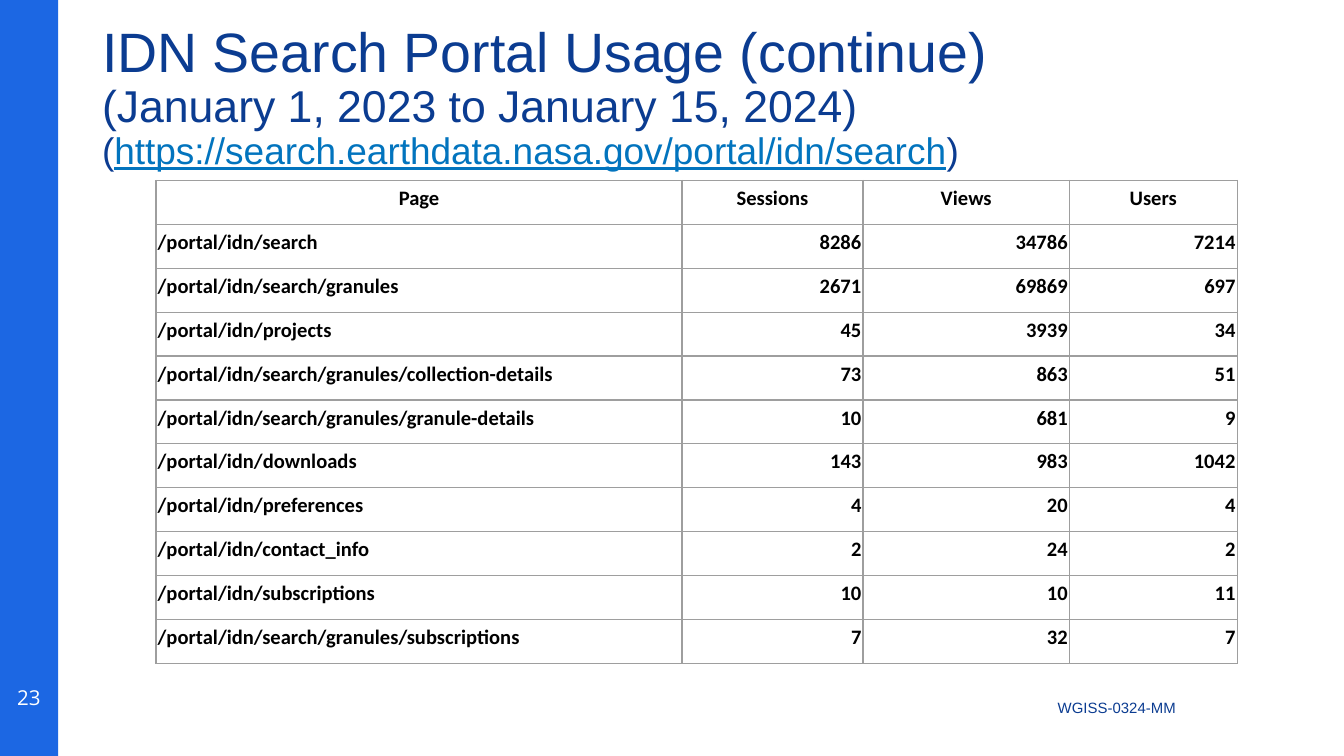
from lxml import etree
from pptx import Presentation
from pptx import util as u
from pptx.dml.color import RGBColor
from pptx.enum import shapes, text
from pptx.oxml import ns

LEFT, CENTER, RIGHT = text.PP_ALIGN.LEFT, text.PP_ALIGN.CENTER, text.PP_ALIGN.RIGHT
TOP, MIDDLE, BOTTOM = text.MSO_ANCHOR.TOP, text.MSO_ANCHOR.MIDDLE, text.MSO_ANCHOR.BOTTOM


def color(value):
    return RGBColor.from_string(value)


def write(paragraph, content, size, font="Arial", ink="0B3C91", bold=False,
          underline=False, align=LEFT, spacing=None):
    paragraph.alignment = align
    if spacing:
        paragraph.line_spacing = spacing
    run = paragraph.add_run()
    run.text = content
    run.font.size = u.Pt(size)
    run.font.name = font
    run.font.color.rgb = color(ink)
    run.font.bold = bold
    run.font.underline = underline


class SlideBuilder:
    navy, blue, link, grid = "0B3C91", "1C67E3", "0274BE", "9E9E9E"

    def __init__(self, presentation):
        self.slide = presentation.slides.add_slide(presentation.slide_layouts[6])

    def band(self, left, top, width, height):
        shape = self.slide.shapes.add_shape(
            shapes.MSO_SHAPE.RECTANGLE, u.Cm(left), u.Cm(top), u.Cm(width), u.Cm(height))
        shape.shadow.inherit = False
        shape.fill.solid()
        shape.fill.fore_color.rgb = color(self.blue)
        shape.line.fill.background()

    def text_box(self, left, top, width, height, anchor, inset_x, inset_y):
        shape = self.slide.shapes.add_textbox(
            u.Cm(left), u.Cm(top), u.Cm(width), u.Cm(height))
        frame = shape.text_frame
        frame.word_wrap = True
        frame.vertical_anchor = anchor
        frame.margin_left = frame.margin_right = u.Cm(inset_x)
        frame.margin_top = frame.margin_bottom = u.Cm(inset_y)
        return frame

    def title(self, lines):
        frame = self.text_box(1.75, 0.41, 21.9, 2.9, MIDDLE, 0.18, 0.1)
        for index, (size, parts) in enumerate(lines):
            paragraph = frame.add_paragraph() if index else frame.paragraphs[0]
            for content, is_link in parts:
                write(paragraph, content, size, ink=self.link if is_link else self.navy,
                      underline=is_link, spacing=0.9)

    def borders(self, cell):
        properties = cell._tc.get_or_add_tcPr()
        for index, side in enumerate(("lnL", "lnR", "lnT", "lnB")):
            line = etree.Element(ns.qn(f"a:{side}"), w=str(u.Pt(0.75)))
            fill = etree.SubElement(line, ns.qn("a:solidFill"))
            etree.SubElement(fill, ns.qn("a:srgbClr"), val=self.grid)
            properties.insert(index, line)

    def table(self, left, top, widths, row_height, rows):
        table = self.slide.shapes.add_table(
            len(rows), len(widths), u.Cm(left), u.Cm(top),
            u.Cm(sum(widths)), u.Cm(row_height * len(rows))).table
        table.first_row = table.horz_banding = False
        for column, width in zip(table.columns, widths):
            column.width = u.Cm(width)
        for row_index, row in enumerate(rows):
            table.rows[row_index].height = u.Cm(row_height)
            for column_index, value in enumerate(row):
                cell = table.cell(row_index, column_index)
                cell.fill.background()
                self.borders(cell)
                cell.vertical_anchor = BOTTOM
                cell.margin_left = cell.margin_right = cell.margin_top = u.Cm(0.03)
                cell.margin_bottom = u.Cm(0.25)
                is_path = row_index > 0 and column_index == 0
                align = CENTER if row_index == 0 else LEFT if is_path else RIGHT
                write(cell.text_frame.paragraphs[0], str(value), 11, font="Calibri",
                      ink="000000", bold=True, align=align,
                      spacing=None if is_path else 1.15)


def main():
    presentation = Presentation()
    presentation.slide_width = u.Cm(25.4)
    presentation.slide_height = u.Cm(14.29)
    builder = SlideBuilder(presentation)

    builder.band(0, 0, 1.1, 14.29)
    builder.title([
        (29.7, [("IDN Search Portal Usage (continue)", False)]),
        (23.9, [("(January 1, 2023 to January 15, 2024)", False)]),
        (19.8, [("(", False),
                ("https://search.earthdata.nasa.gov/portal/idn/search", True),
                (")", False)]),
    ])
    builder.table(2.95, 3.41, [9.94, 3.42, 3.9, 3.17], 0.83, [
        ("Page", "Sessions", "Views", "Users"),
        ("/portal/idn/search", 8286, 34786, 7214),
        ("/portal/idn/search/granules", 2671, 69869, 697),
        ("/portal/idn/projects", 45, 3939, 34),
        ("/portal/idn/search/granules/collection-details", 73, 863, 51),
        ("/portal/idn/search/granules/granule-details", 10, 681, 9),
        ("/portal/idn/downloads", 143, 983, 1042),
        ("/portal/idn/preferences", 4, 20, 4),
        ("/portal/idn/contact_info", 2, 24, 2),
        ("/portal/idn/subscriptions", 10, 10, 11),
        ("/portal/idn/search/granules/subscriptions", 7, 32, 7),
    ])
    footer = builder.text_box(19.74, 13.03, 3.35, 0.64, TOP, 0.25, 0.25)
    write(footer.paragraphs[0], "WGISS-0324-MM", 8)
    page_number = builder.text_box(0.1, 12.8, 0.89, 0.76, MIDDLE, 0.18, 0.1)
    page_number.word_wrap = False
    write(page_number.paragraphs[0], "23", 11, font="Open Sans", ink="FFFFFF", align=CENTER)

    presentation.save("out.pptx")


if __name__ == "__main__":
    main()
